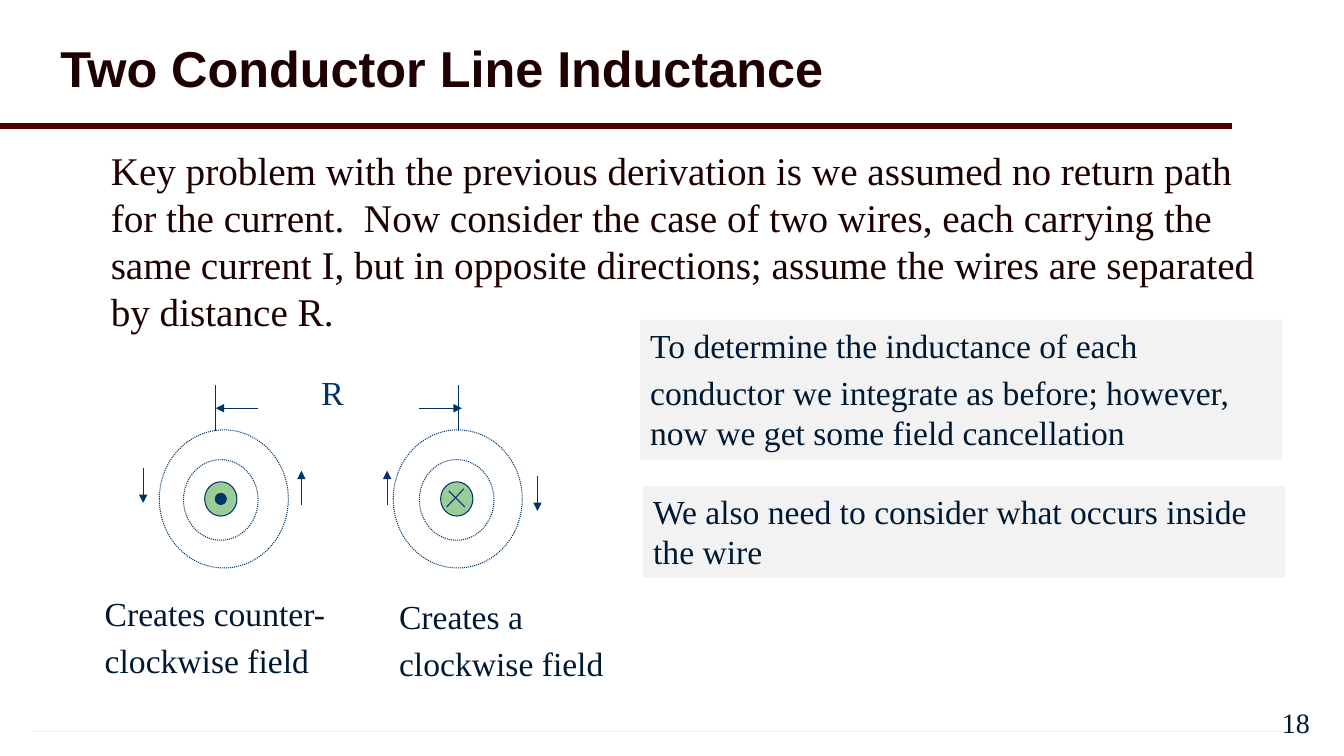
import pptx
import pptx.util
import pptx.dml.color
import pptx.enum.dml
import pptx.enum.shapes
import pptx.enum.text
import pptx.oxml.ns
import lxml.etree

Inches = pptx.util.Inches
Pt = pptx.util.Pt
RGBColor = pptx.dml.color.RGBColor
SHAPE = pptx.enum.shapes.MSO_SHAPE
ANCHOR = pptx.enum.text.MSO_ANCHOR
ALIGN = pptx.enum.text.PP_ALIGN
qn = pptx.oxml.ns.qn

WHITE = RGBColor(0xFF, 0xFF, 0xFF)
MAROON = RGBColor(0x50, 0x00, 0x00)
DARK_MAROON = RGBColor(0x1E, 0x00, 0x00)
NAVY = RGBColor(0x00, 0x33, 0x66)
DARK_NAVY = RGBColor(0x00, 0x19, 0x33)
WIRE_GREEN = RGBColor(0x99, 0xCC, 0x99)
NOTE_GREY = RGBColor(0xF2, 0xF2, 0xF2)
LILAC = RGBColor(0xCC, 0x99, 0xFF)
PALE_LILAC = RGBColor(0xF3, 0xEB, 0xFF)

prs = pptx.Presentation()
prs.slide_width, prs.slide_height = Inches(13.33), Inches(7.5)
slide = prs.slides.add_slide(prs.slide_layouts[6])
slide.background.fill.solid()
slide.background.fill.fore_color.rgb = WHITE


def add_text(box, paragraphs, size=24, color=DARK_NAVY, font="Times New Roman",
             bold=False, anchor=ANCHOR.TOP, align=ALIGN.LEFT, wrap=True, fill=None):
    """Add a text box at (left, top, width, height); later paragraphs get 20% space before."""
    text_box = slide.shapes.add_textbox(*map(Inches, box))
    if fill is not None:
        text_box.fill.solid()
        text_box.fill.fore_color.rgb = fill
    frame = text_box.text_frame
    frame.word_wrap = wrap
    frame.vertical_anchor = anchor
    for index, text in enumerate(paragraphs):
        paragraph = frame.paragraphs[0] if index == 0 else frame.add_paragraph()
        paragraph.alignment = align
        if index:
            paragraph.space_before = Pt(0.2 * size)
        run = paragraph.add_run()
        run.text = text
        run.font.name, run.font.size, run.font.bold = font, Pt(size), bold
        run.font.color.rgb = color


def add_line(start, end, color=NAVY, width=0.75, arrow=False):
    line = slide.shapes.add_connector(
        pptx.enum.shapes.MSO_CONNECTOR.STRAIGHT, *map(Inches, (*start, *end)))
    line.line.color.rgb = color
    line.line.width = Pt(width)
    if arrow:
        lxml.etree.SubElement(line.line._get_or_add_ln(), qn("a:tailEnd"), type="triangle")
    lxml.etree.SubElement(line._element.spPr, qn("a:effectLst"))


# Frame of the slide
footer_rule = slide.shapes.add_shape(
    SHAPE.RECTANGLE, Inches(0.33), Inches(7.25), Inches(12.66), Inches(0.01))
footer_rule.shadow.inherit = False
footer_rule.line.fill.background()
footer_rule.fill.gradient()
for stop, color in zip(footer_rule.fill.gradient_stops, (LILAC, PALE_LILAC)):
    stop.color.rgb = color
add_line((0, 1.25), (12.22, 1.25), MAROON, 4)
add_text((0.5, 0.08, 12.22, 1.17), ["Two Conductor Line Inductance"], 36, DARK_MAROON,
         "Arial", bold=True, anchor=ANCHOR.MIDDLE)

# Explanation
add_text((1, 1.4, 11.72, 2.25), [
    "Key problem with the previous derivation is we assumed no return path for the "
    "current.  Now consider the case of two wires, each carrying the same current I, "
    "but in opposite directions; assume the wires are separated by distance R."],
    28, DARK_MAROON)
add_text((0.94, 5.83, 2.39, 0.99), ["Creates counter-", "clockwise field"])
add_text((3.86, 5.86, 2.23, 0.99), ["Creates a", "clockwise field"])
add_text((6.35, 3.17, 6.37, 1.39), [
    "To determine the inductance of each",
    "conductor we integrate as before; however, now we get some field cancellation"],
    fill=NOTE_GREY)

# Wires, field circles and the dot of the outgoing current: centre, size, fill, dotted
circles = [
    ((2.19, 4.95), (0.32, 0.34), WIRE_GREEN, False),
    ((4.53, 4.95), (0.32, 0.34), WIRE_GREEN, False),
    ((2.19, 4.96), (0.74, 0.8), None, True),
    ((4.53, 4.96), (0.74, 0.8), None, True),
    ((2.19, 4.95), (0.11, 0.11), NAVY, False),
    ((4.54, 4.95), (1.28, 1.37), None, True),
    ((2.22, 4.95), (1.28, 1.37), None, True),
]
for (x, y), (width, height), fill, dotted in circles:
    circle = slide.shapes.add_shape(SHAPE.OVAL, Inches(x - width / 2), Inches(y - height / 2),
                                    Inches(width), Inches(height))
    circle.shadow.inherit = False
    circle.line.color.rgb = NAVY
    circle.line.width = Pt(0.75)
    if dotted:
        circle.line.dash_style = pptx.enum.dml.MSO_LINE.ROUND_DOT
    if fill is None:
        circle.fill.background()
    else:
        circle.fill.solid()
        circle.fill.fore_color.rgb = fill

# Distance R between the wires
for x in (2.14, 4.55):
    add_line((x, 3.82), (x, 4.28))
add_line((2.56, 4.05), (2.14, 4.05), arrow=True)
add_line((4.16, 4.05), (4.58, 4.05), arrow=True)
add_text((3.09, 3.64, 0.42, 0.5), ["R"], color=NAVY, wrap=False)

# Field directions, and the cross of the incoming current
for x, tail_y, head_y in ((1.42, 4.64, 4.99), (2.99, 5.01, 4.67),
                          (3.84, 5.01, 4.67), (5.33, 4.72, 5.07)):
    add_line((x, tail_y), (x, head_y), arrow=True)
add_line((4.45, 4.87), (4.61, 5.03))
add_line((4.43, 5.03), (4.6, 4.85))

add_text((12.42, 6.92, 0.67, 0.5), ["18"], 20, anchor=ANCHOR.MIDDLE,
         align=ALIGN.RIGHT, wrap=False)
add_text((6.38, 4.82, 6.37, 0.91),
         ["We also need to consider what occurs inside the wire"], fill=NOTE_GREY)

prs.save("out.pptx")
